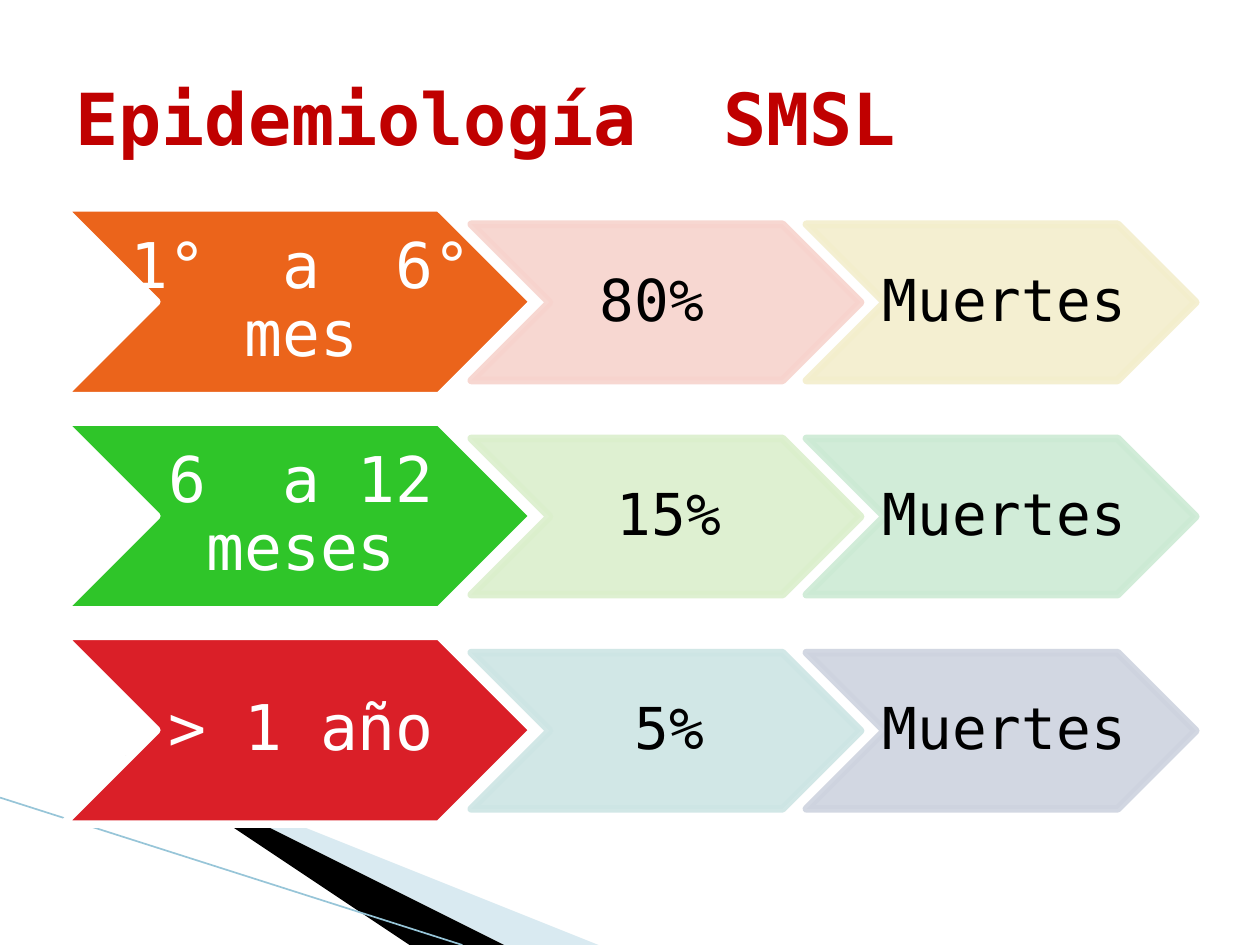
import dataclasses

import pptx
import pptx.dml.color
import pptx.enum.shapes
import pptx.enum.text
import pptx.oxml.ns
import pptx.slide
import pptx.util
from lxml import etree

Inches = pptx.util.Inches
Pt = pptx.util.Pt
RGBColor = pptx.dml.color.RGBColor
qn = pptx.oxml.ns.qn

FONT = "DejaVu Sans Mono"
WHITE = RGBColor(0xFF, 0xFF, 0xFF)
BLACK = RGBColor(0, 0, 0)
CRIMSON = RGBColor(0xC0, 0, 0)
SKY = RGBColor(0xA0, 0xCB, 0xDC)
STEEL = RGBColor(0x97, 0xC5, 0xD8)
ORANGE = RGBColor(0xEB, 0x64, 0x1B)
GREEN = RGBColor(0x2F, 0xC5, 0x29)
RED = RGBColor(0xDA, 0x1F, 0x28)
ROSE = RGBColor(0xF7, 0xD3, 0xCD)
CREAM = RGBColor(0xF3, 0xEE, 0xCC)
LIME = RGBColor(0xDB, 0xEF, 0xCC)
MINT = RGBColor(0xCC, 0xEA, 0xD4)
AQUA = RGBColor(0xCD, 0xE5, 0xE4)
LILAC = RGBColor(0xCE, 0xD3, 0xDF)

TOP = 1.65
PITCH = 1.7


@dataclasses.dataclass(frozen=True)
class Box:
    left: float
    top: float
    width: float
    height: float

    def emu(self) -> list[int]:
        return [Inches(n) for n in dataclasses.astuple(self)]


@dataclasses.dataclass(frozen=True)
class Style:
    size: float
    color: RGBColor
    bold: bool = False


@dataclasses.dataclass(frozen=True)
class Row:
    age: str
    share: str
    main: RGBColor
    mid: RGBColor
    last: RGBColor


ROWS = [
    Row("1°  a  6° mes", "80% ", ORANGE, ROSE, CREAM),
    Row("6  a 12 meses", "15%", GREEN, LIME, MINT),
    Row("> 1 año", "5%", RED, AQUA, LILAC),
]
HEAD = Style(41, CRIMSON, True)
LARGE = Style(36, WHITE)
SMALL = Style(33, BLACK)


def fade(shape, percent: int) -> None:
    for color in shape._element.spPr.iter(qn("a:srgbClr")):
        etree.SubElement(color, qn("a:alpha"), val=str(percent * 1000))


def write(slide: pptx.slide.Slide, box: Box, text: str, style: Style):
    frame = slide.shapes.add_textbox(*box.emu()).text_frame
    frame.word_wrap = True
    frame.vertical_anchor = pptx.enum.text.MSO_ANCHOR.MIDDLE
    run = frame.paragraphs[0].add_run()
    run.text = text
    run.font.name = FONT
    run.font.size = Pt(style.size)
    run.font.bold = style.bold
    run.font.color.rgb = style.color
    return frame


def arrow(slide: pptx.slide.Slide, box: Box, text: str, style: Style,
          fill: RGBColor, pale: bool) -> None:
    kind = pptx.enum.shapes.MSO_SHAPE.CHEVRON
    shape = slide.shapes.add_shape(kind, *box.emu())
    shape.shadow.inherit = False
    shape.fill.solid()
    shape.fill.fore_color.rgb = fill
    shape.line.color.rgb = fill if pale else WHITE
    shape.line.width = Pt(4.33)
    if pale:
        fade(shape, 90)
    frame = write(slide, box, text, style)
    frame.margin_left = Inches(0.05)
    frame.margin_right = 0
    frame.margin_top = frame.margin_bottom = Inches(0.02 if pale else 0.03)
    frame.paragraphs[0].alignment = pptx.enum.text.PP_ALIGN.CENTER
    frame.paragraphs[0].line_spacing = 0.9


def wedge(slide: pptx.slide.Slide, points: list[tuple[float, float]],
          fill: RGBColor):
    pen = slide.shapes.build_freeform(*points[0], scale=Inches(1))
    pen.add_line_segments(points[1:], close=True)
    shape = pen.convert_to_shape()
    shape.shadow.inherit = False
    shape.fill.solid()
    shape.fill.fore_color.rgb = fill
    shape.line.fill.background()
    return shape


def corner(slide: pptx.slide.Slide) -> None:
    fade(wedge(slide, [(0.55, 6.5), (5.95, 7.5), (4.56, 7.5)], SKY), 40)
    wedge(slide, [(0.53, 6.49), (4.57, 7.5), (3.7, 7.5)], BLACK)
    edge = slide.shapes.add_connector(
        pptx.enum.shapes.MSO_CONNECTOR.STRAIGHT,
        Inches(0), Inches(6.33), Inches(3.67), Inches(7.5))
    edge.line.color.rgb = STEEL
    edge.line.width = Pt(0.95)
    etree.SubElement(edge._element.spPr, qn("a:effectLst"))


def main() -> None:
    deck = pptx.Presentation()
    deck.slide_width = Inches(10)
    deck.slide_height = Inches(7.5)
    slide = deck.slides.add_slide(deck.slide_layouts[6])
    corner(slide)
    for i, row in enumerate(ROWS):
        top = TOP + i * PITCH
        arrow(slide, Box(0.5, top, 3.73, 1.49), row.age, LARGE, row.main, False)
        pairs = [(row.share, row.mid), ("Muertes", row.last)]
        for j, (text, fill) in enumerate(pairs):
            box = Box(3.74 + j * 2.66, top + 0.13, 3.09, 1.24)
            arrow(slide, box, text, SMALL, fill, True)
    write(slide, Box(0.5, 0.3, 9, 1.25), "Epidemiología  SMSL", HEAD)
    deck.save("out.pptx")


if __name__ == "__main__":
    main()
